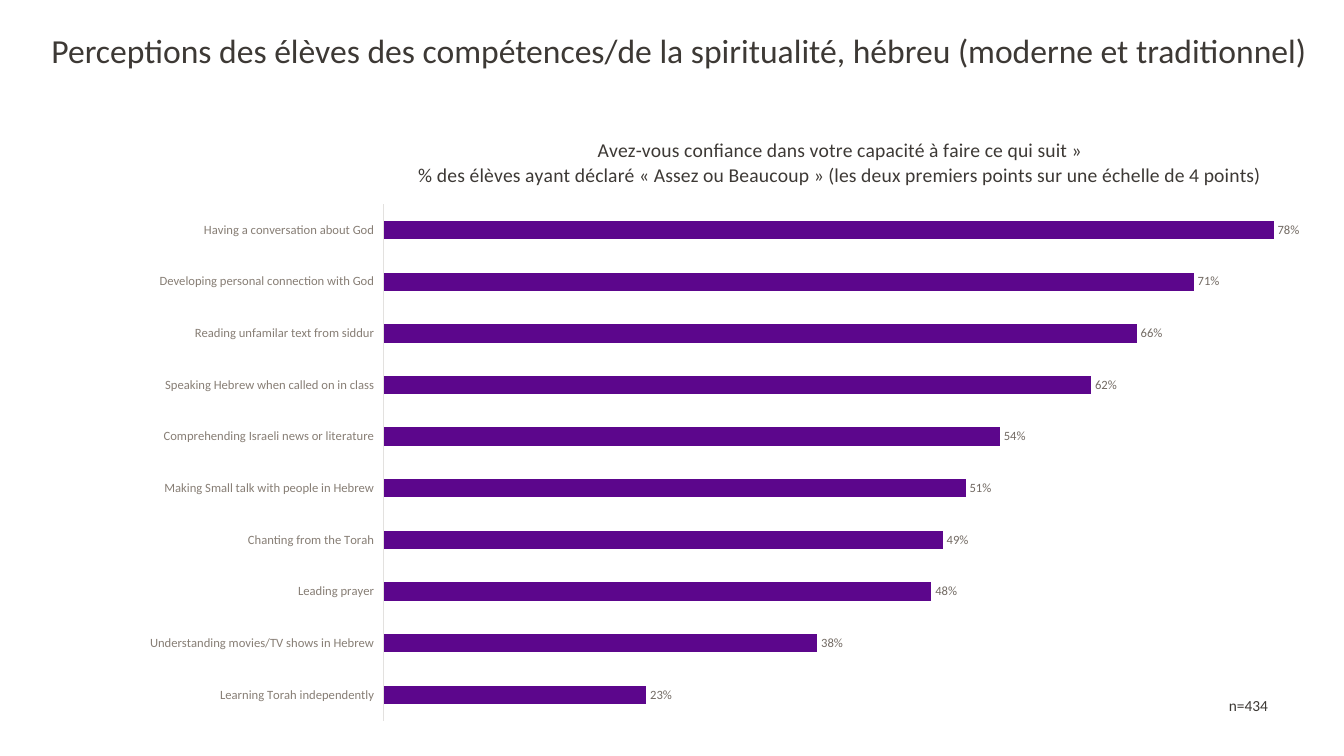
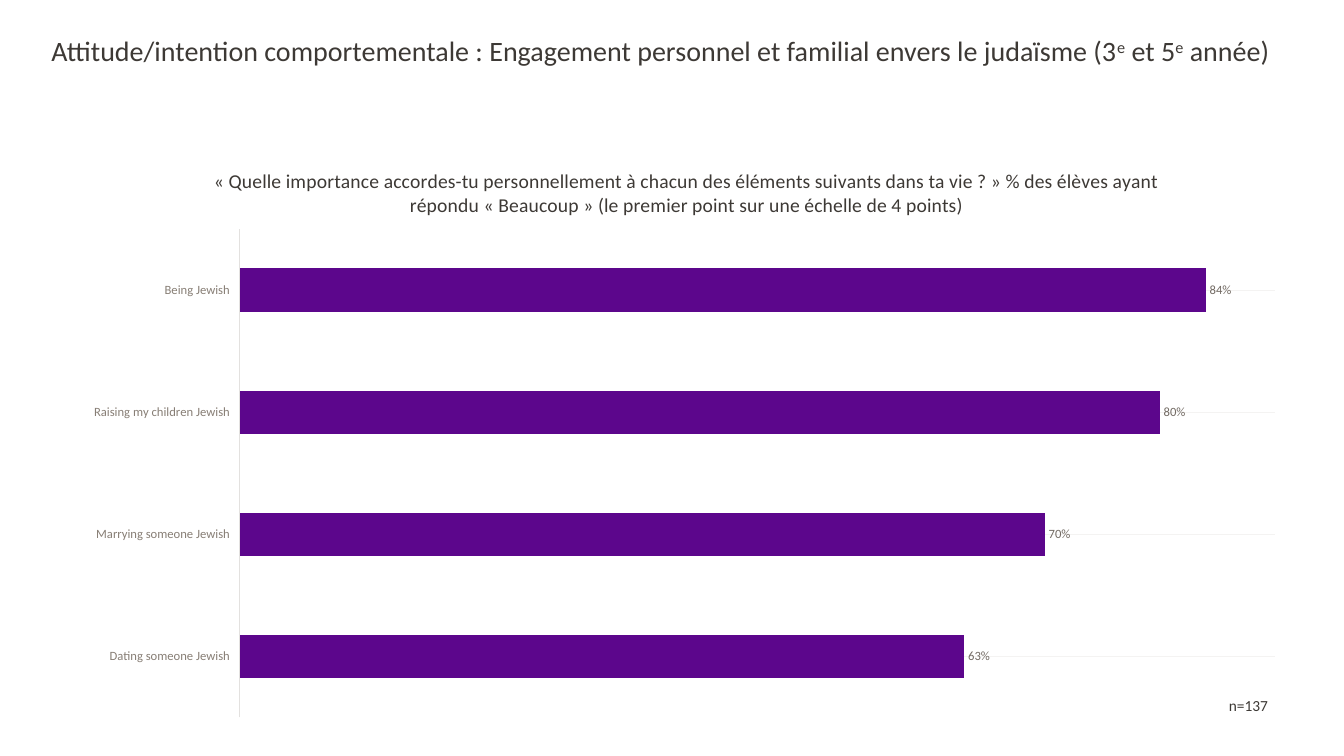
from lxml import etree
from pptx import Presentation
from pptx.chart.data import CategoryChartData
from pptx.dml.color import RGBColor
from pptx.enum.chart import XL_CHART_TYPE, XL_LABEL_POSITION, XL_TICK_LABEL_POSITION, XL_TICK_MARK
from pptx.enum.text import MSO_ANCHOR, MSO_AUTO_SIZE, PP_ALIGN
from pptx.oxml.ns import qn
from pptx.util import Pt

# Shared style
FONT = "Calibri"
COLORS = {"text": "3D3935", "category": "877E75", "label": "726A63",
          "axis": "E3E1DF", "grid": "F4F3F2", "bar": "5C068C"}
PERCENT = "0\\%"
TITLE_ONLY = 5

# Content: title runs are (text, superscript); boxes are left, top, width, height in points
SLIDES = [
    {
        "title": [("Perceptions des élèves des compétences/de la spiritualité, "
                   "hébreu (moderne et traditionnel)", False)],
        "title_size": 24,
        "title_width": 911.5,
        "sample": "n=434",
        "question": ["Avez-vous confiance dans votre capacité à faire ce qui suit »",
                     "% des élèves ayant déclaré « Assez ou Beaucoup » "
                     "(les deux premiers points sur une échelle de 4 points)"],
        "question_at": (0.23, 0.01),
        "chart_box": (82, 91.4, 933, 433.4),
        "plot": (0.206, 0.126, 0.786, 0.851),
        "grid": False,
        "scores": [
            ("Having a conversation about God", 78),
            ("Developing personal connection with God", 71),
            ("Reading unfamilar text from siddur", 66),
            ("Speaking Hebrew when called on in class", 62),
            ("Comprehending Israeli news or literature", 54),
            ("Making Small talk with people in Hebrew", 51),
            ("Chanting from the Torah", 49),
            ("Leading prayer", 48),
            ("Understanding movies/TV shows in Hebrew", 38),
            ("Learning Torah independently", 23),
        ],
    },
    {
        "title": [("Attitude/intention comportementale : Engagement personnel et familial "
                   "envers le judaïsme (3", False),
                  ("e", True), (" et 5", False), ("e", True), (" année)", False)],
        "title_size": 20,
        "title_width": 930,
        "sample": "n=137",
        "question": ["« Quelle importance accordes-tu personnellement à chacun des éléments "
                     "suivants dans ta vie ? » % des élèves ayant répondu « Beaucoup » "
                     "(le premier point sur une échelle de 4 points)"],
        "question_at": (0.11, 0.04),
        "chart_box": (54, 100, 875, 421),
        "plot": (0.134, 0.151, 0.845, 0.829),
        "grid": True,
        "scores": [
            ("Being Jewish", 84),
            ("Raising my children Jewish", 80),
            ("Marrying someone Jewish", 70),
            ("Dating someone Jewish", 63),
        ],
    },
]


def color(name):
    return RGBColor.from_string(COLORS[name])


def style_font(font, size, color_name):
    font.name = FONT
    font.size = Pt(size)
    font.bold = False
    font.color.rgb = color(color_name)


def set_layout(element, index, settings):
    """Give a chart part a manual layout, as fractions of the chart."""
    for old in element.findall(qn("c:layout")):
        element.remove(old)
    layout = etree.Element(qn("c:layout"))
    manual = etree.SubElement(layout, qn("c:manualLayout"))
    for tag, value in settings:
        etree.SubElement(manual, qn(f"c:{tag}")).set("val", str(value))
    element.insert(index, layout)


def add_center_gridlines(axis):
    """Draw a faint line through the middle of each category."""
    axis.has_minor_gridlines = True
    gridlines = axis._element.find(qn("c:minorGridlines"))
    properties = etree.SubElement(gridlines, qn("c:spPr"))
    line = etree.SubElement(properties, qn("a:ln"), w=str(Pt(0.75)))
    fill = etree.SubElement(line, qn("a:solidFill"))
    etree.SubElement(fill, qn("a:srgbClr"), val=COLORS["grid"])


def add_title(slide, content):
    title = slide.shapes.title
    title.left, title.top = Pt(29.5), Pt(4.3)
    title.width, title.height = Pt(content["title_width"]), Pt(66.2)
    frame = title.text_frame
    frame.word_wrap = True
    frame.auto_size = MSO_AUTO_SIZE.NONE
    frame.vertical_anchor = MSO_ANCHOR.MIDDLE
    paragraph = frame.paragraphs[0]
    paragraph.alignment = PP_ALIGN.LEFT
    paragraph.line_spacing = 0.9
    for text, superscript in content["title"]:
        run = paragraph.add_run()
        run.text = text
        style_font(run.font, content["title_size"], "text")
        if superscript:
            run._r.get_or_add_rPr().set("baseline", "30000")


def add_sample_size(slide, text):
    box = slide.shapes.add_textbox(Pt(855.4), Pt(493.9), Pt(72.7), Pt(20.9))
    box.text_frame.word_wrap = True
    paragraph = box.text_frame.paragraphs[0]
    paragraph.alignment = PP_ALIGN.CENTER
    run = paragraph.add_run()
    run.text = text
    style_font(run.font, 11, "text")


def add_question(chart, content):
    chart.has_title = True
    frame = chart.chart_title.text_frame
    for number, line in enumerate(content["question"]):
        paragraph = frame.add_paragraph() if number else frame.paragraphs[0]
        paragraph.alignment = PP_ALIGN.CENTER
        style_font(paragraph.font, 14, "text")
        run = paragraph.add_run()
        run.text = line
        style_font(run.font, 14, "text")
    left, top = content["question_at"]
    set_layout(chart.chart_title._element, 1,
               [("xMode", "edge"), ("yMode", "edge"), ("x", left), ("y", top)])


def add_bar_chart(slide, content):
    data = CategoryChartData(number_format=PERCENT)
    data.categories = [name for name, _ in content["scores"]]
    data.add_series("Series 1", [score for _, score in content["scores"]])
    box = [Pt(length) for length in content["chart_box"]]
    chart = slide.shapes.add_chart(XL_CHART_TYPE.BAR_CLUSTERED, *box, data).chart
    chart.has_legend = False
    style_font(chart.font, 10, "text")
    add_question(chart, content)

    # Axes
    categories = chart.category_axis
    categories.reverse_order = True
    categories.major_tick_mark = categories.minor_tick_mark = XL_TICK_MARK.NONE
    categories.tick_label_position = XL_TICK_LABEL_POSITION.LOW
    style_font(categories.tick_labels.font, 9, "category")
    categories.format.line.color.rgb = color("axis")
    categories.format.line.width = Pt(0.75)
    categories.has_major_gridlines = False
    if content["grid"]:
        add_center_gridlines(categories)
    values = chart.value_axis
    values.minimum_scale, values.maximum_scale = 0, 90
    values.has_major_gridlines = False
    values.visible = False

    # Bars and labels
    plot = chart.plots[0]
    plot.gap_width = 182
    plot.vary_by_categories = False
    series = plot.series[0]
    series.format.fill.solid()
    series.format.fill.fore_color.rgb = color("bar")
    labels = series.data_labels
    labels.show_value = True
    labels.position = XL_LABEL_POSITION.OUTSIDE_END
    labels.number_format = PERCENT
    labels.number_format_is_linked = False
    style_font(labels.font, 9, "label")

    # Plot area
    plot_area = chart._chartSpace.find(f".//{qn('c:plotArea')}")
    set_layout(plot_area, 0, [("layoutTarget", "inner"), ("xMode", "edge"), ("yMode", "edge"),
                              *zip("xywh", content["plot"])])


def main():
    presentation = Presentation()
    presentation.slide_width, presentation.slide_height = Pt(960), Pt(540)
    for content in SLIDES:
        slide = presentation.slides.add_slide(presentation.slide_layouts[TITLE_ONLY])
        add_title(slide, content)
        add_sample_size(slide, content["sample"])
        add_bar_chart(slide, content)
    presentation.save("out.pptx")


if __name__ == "__main__":
    main()
